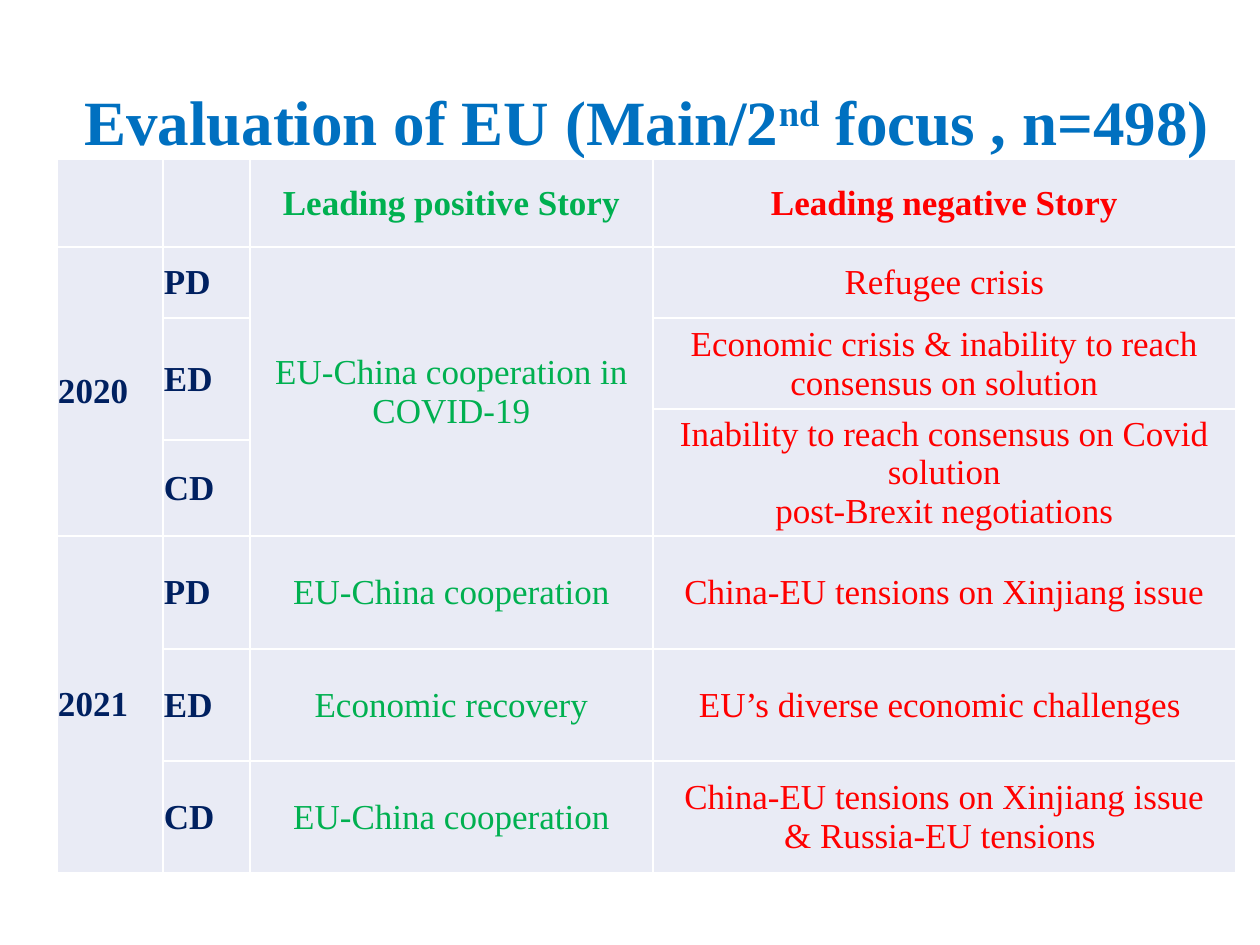
from lxml import etree
from pptx import Presentation
from pptx.dml.color import RGBColor
from pptx.enum.text import MSO_ANCHOR, PP_ALIGN
from pptx.oxml.ns import qn
from pptx.util import Emu, Pt

PX = 914400 // 126
FONT = "Times New Roman"
BLUE = RGBColor(0x00, 0x70, 0xC0)
NAVY = RGBColor(0x00, 0x20, 0x60)
GREEN = RGBColor(0x00, 0xB0, 0x50)
RED = RGBColor(0xFF, 0x00, 0x00)
PALE = RGBColor(0xE9, 0xEB, 0xF5)
BORDER = "FFFFFF"

# Content: title parts are (text, is superscript)
TITLE = [("Evaluation of EU (Main/2", False), ("nd", True), (" focus , n=498)", False)]
TITLE_BOX = (57, 79, 1179, 92)

TABLE_LEFT, TABLE_TOP = 57, 159
COLUMN_WIDTHS = [106, 87, 403, 583]
ROW_HEIGHTS = [88, 71, 91, 31, 86, 113, 112, 112]
COLUMN_STYLES = [  # colour, alignment, bold in body rows
    (NAVY, PP_ALIGN.LEFT, True),
    (NAVY, PP_ALIGN.LEFT, True),
    (GREEN, PP_ALIGN.CENTER, False),
    (RED, PP_ALIGN.CENTER, False),
]
# Each column lists (text, rows spanned) from the top down
COLUMNS = [
    [("", 1), ("2020", 4), ("2021", 3)],
    [("", 1), ("PD", 1), ("ED", 2), ("CD", 1), ("PD", 1), ("ED", 1), ("CD", 1)],
    [("Leading positive Story", 1), ("EU-China cooperation in COVID-19", 4),
     ("EU-China cooperation", 1), ("Economic recovery", 1), ("EU-China cooperation", 1)],
    [("Leading negative Story", 1), ("Refugee crisis", 1),
     ("Economic crisis & inability to reach consensus on solution", 1),
     ("Inability to reach consensus on Covid solution\npost-Brexit negotiations", 2),
     ("China-EU tensions on Xinjiang issue", 1),
     ("EU’s diverse economic challenges ", 1),
     ("China-EU tensions on Xinjiang issue\n& Russia-EU tensions ", 1)],
]


def px(value):
    return Emu(value * PX)


def set_font(font, size, color, bold):
    font.name, font.size, font.bold = FONT, Pt(size), bold
    font.color.rgb = color


def style_cell(cell):
    cell.margin_left = cell.margin_right = cell.margin_top = px(1)
    cell.margin_bottom = 0
    cell.vertical_anchor = MSO_ANCHOR.MIDDLE
    properties = cell._tc.get_or_add_tcPr()
    for side in ("a:lnL", "a:lnR", "a:lnT", "a:lnB"):
        line = etree.SubElement(properties, qn(side), w=str(Pt(1)))
        fill = etree.SubElement(line, qn("a:solidFill"))
        etree.SubElement(fill, qn("a:srgbClr"), val=BORDER)
    cell.fill.solid()
    cell.fill.fore_color.rgb = PALE


prs = Presentation()
prs.slide_width, prs.slide_height = px(1260), px(945)
slide = prs.slides.add_slide(prs.slide_layouts[6])

# Title
title = slide.shapes.add_textbox(*map(px, TITLE_BOX)).text_frame
title.word_wrap = True
title.vertical_anchor = MSO_ANCHOR.MIDDLE
heading = title.paragraphs[0]
heading.alignment = PP_ALIGN.CENTER
heading.line_spacing = 0.9
set_font(heading.font, 36, BLUE, True)
for text, superscript in TITLE:
    run = heading.add_run()
    run.text = text
    if superscript:
        run.font._element.set("baseline", "30000")

# Table grid
table = slide.shapes.add_table(
    len(ROW_HEIGHTS), len(COLUMN_WIDTHS), px(TABLE_LEFT), px(TABLE_TOP),
    px(sum(COLUMN_WIDTHS)), px(sum(ROW_HEIGHTS))).table
for column, width in zip(table.columns, COLUMN_WIDTHS):
    column.width = px(width)
for row, height in zip(table.rows, ROW_HEIGHTS):
    row.height = px(height)
for cell in table.iter_cells():
    style_cell(cell)

# Stories, merged down each column
for col, (stories, (color, alignment, bold)) in enumerate(zip(COLUMNS, COLUMN_STYLES)):
    row = 0
    for story, span in stories:
        cell = table.cell(row, col)
        if span > 1:
            cell.merge(table.cell(row + span - 1, col))
        cell.text = story
        for paragraph in cell.text_frame.paragraphs:
            paragraph.alignment = alignment
            set_font(paragraph.font, 20, color, bold or row == 0)
        row += span

prs.save("out.pptx")
